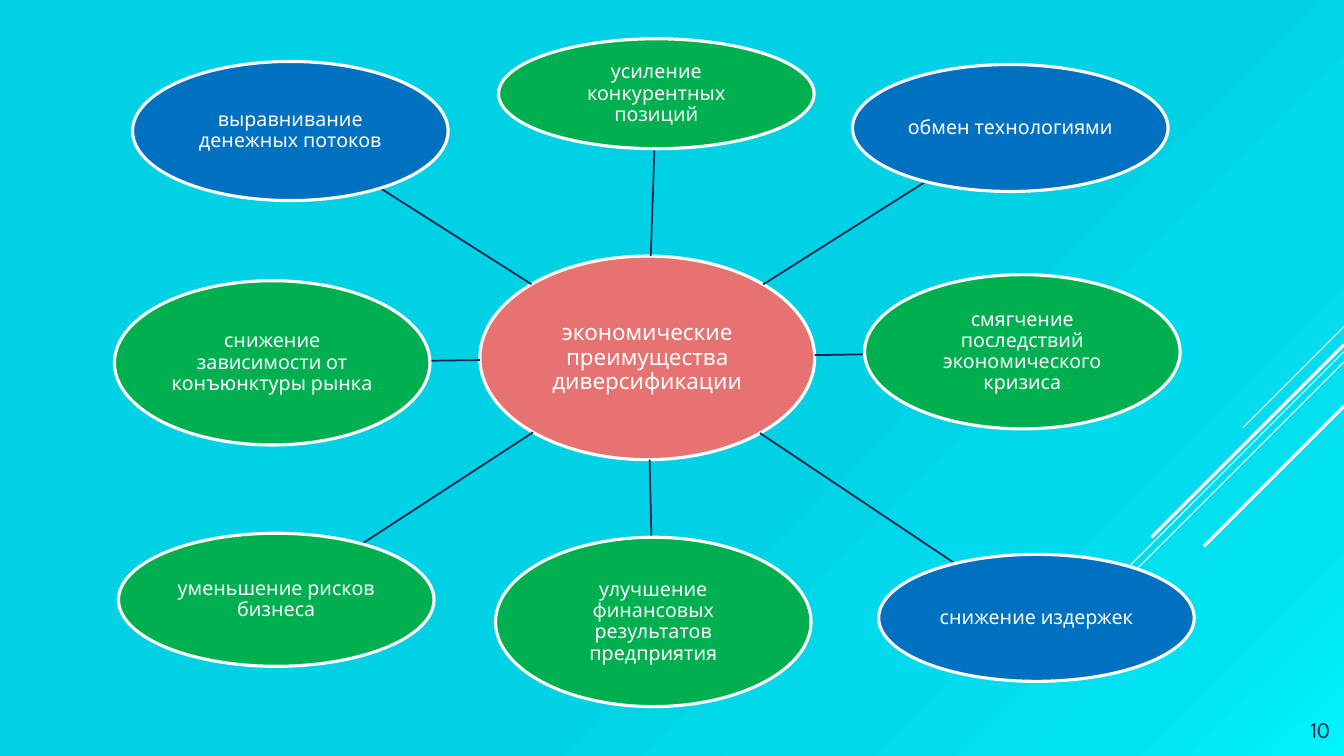
import math
from lxml import etree
from pptx import Presentation
from pptx import util as u
from pptx.dml import color
from pptx.enum import shapes, text
from pptx.oxml import ns

COLUMNS, ROWS = 13.33, 7.5
CELL = u.Inches(1)
FONT = "League Spartan"
WHITE, NAVY, INK = "FFFFFF", "04264E", "0A304A"
CORAL, GREEN, BLUE = "E67272", "00B050", "0070C0"
BACKGROUND_STOPS = [(0, "00F5FF"), (11, "01E3F2"), (26, "01DAEC"), (41, "01D1E5")]
DIAGONALS = [(3.24, 1, 0.75), (3.49, 3.26, 0.75), (3.59, 2.07, 0.75),
             (3.42, 1.91, 2.25), (4.03, 1.39, 2.25)]
HUB_TEXT = "экономические преимущества диверсификации"
BENEFIT_WIDTH = 3.13
BENEFITS = [
    ("усиление конкурентных позиций", 0.09, -2.62, 1.09, GREEN),
    ("обмен технологиями", 3.6, -2.28, 1.26, BLUE),
    ("смягчение последствий экономического кризиса", 3.72, -0.06, 1.53, GREEN),
    ("снижение издержек", 3.86, 2.58, 1.26, BLUE),
    ("улучшение финансовых результатов предприятия", 0.06, 2.62, 1.68, GREEN),
    ("уменьшение рисков бизнеса", -3.68, 2.4, 1.32, GREEN),
    ("снижение зависимости от конъюнктуры рынка", -3.72, 0.05, 1.63, GREEN),
    ("выравнивание денежных потоков", -3.54, -2.25, 1.38, BLUE),
]


def rgb(value):
    """Turn a hex string into a colour."""
    return color.RGBColor.from_string(value)


def grid(*cells):
    """Turn grid cells into slide lengths."""
    return [round(cell * CELL) for cell in cells]


def set_all(target, values):
    """Set every attribute of a dict on the target."""
    for name, value in values.items():
        setattr(target, name, value)


def write(frame, words, size, ink, frame_format, paragraph_format):
    """Write one formatted paragraph into a text frame."""
    set_all(frame, {"word_wrap": True, **frame_format})
    paragraph = frame.paragraphs[0]
    set_all(paragraph, paragraph_format)
    run = paragraph.add_run()
    run.text = words
    set_all(run.font, {"size": u.Pt(size), "name": FONT})
    run.font.color.rgb = rgb(ink)


def draw_line(slide, start, end, ink, width):
    """Draw a straight line without a shadow."""
    line = slide.shapes.add_connector(
        shapes.MSO_CONNECTOR.STRAIGHT, *grid(*start, *end))
    line.line.color.rgb = rgb(ink)
    line.line.width = u.Pt(width)
    etree.SubElement(line._element.spPr, ns.qn("a:effectLst"))


def draw_ellipse(slide, centre, size, words, points, fill):
    """Draw a white-rimmed ellipse with its label around a centre."""
    (x, y), (width, height) = centre, size
    shape = slide.shapes.add_shape(
        shapes.MSO_SHAPE.OVAL, *grid(x - width / 2, y - height / 2, width, height))
    shape.shadow.inherit = False
    shape.fill.solid()
    shape.fill.fore_color.rgb = rgb(fill)
    shape.line.color.rgb = rgb(WHITE)
    shape.line.width = u.Pt(2.25)
    margins = {f"margin_{side}": u.Inches(0.01)
               for side in ("left", "top", "right", "bottom")}
    write(shape.text_frame, words, points, WHITE,
          {"vertical_anchor": text.MSO_ANCHOR.MIDDLE, **margins},
          {"alignment": text.PP_ALIGN.CENTER, "line_spacing": 0.9})


def rim_point(centre, size, dx, dy):
    """Find where a ray from the centre of an ellipse crosses its rim."""
    reach = math.hypot(dx / (size[0] / 2), dy / (size[1] / 2))
    return centre[0] + dx / reach, centre[1] + dy / reach


def draw_background(slide):
    """Fill the slide with its diagonal gradient."""
    fill = slide.background.fill
    fill.gradient()
    fill.gradient_angle = 135
    stops = slide._element.find(".//" + ns.qn("a:gsLst"))
    for stop in list(stops):
        stops.remove(stop)
    for position, value in BACKGROUND_STOPS:
        stop = etree.SubElement(stops, ns.qn("a:gs"), pos=str(position * 1000))
        etree.SubElement(stop, ns.qn("a:srgbClr"), val=value)


def draw_diagonals(slide, right):
    """Draw the parallel lines that fall from the right edge at 45 degrees."""
    for top, run, width in DIAGONALS:
        draw_line(slide, (right, top), (right - run, top + run), WHITE, width)


def draw_wheel(slide, left, top, width, height):
    """Draw the hub in its box and the benefits joined to it by spokes."""
    hub, hub_size = (left + width / 2, top + height / 2), (width, height)
    draw_ellipse(slide, hub, hub_size, HUB_TEXT, 16, CORAL)
    for words, dx, dy, benefit_height, fill in BENEFITS:
        centre, size = (hub[0] + dx, hub[1] + dy), (BENEFIT_WIDTH, benefit_height)
        draw_line(slide, rim_point(hub, hub_size, dx, dy),
                  rim_point(centre, size, -dx, -dy), NAVY, 1.25)
        draw_ellipse(slide, centre, size, words, 14, fill)


def draw_number(slide, left, top, width, height):
    """Write the slide number in its box."""
    box = slide.shapes.add_textbox(*grid(left, top, width, height))
    write(box.text_frame, "10", 16, INK,
          {"vertical_anchor": text.MSO_ANCHOR.BOTTOM},
          {"alignment": text.PP_ALIGN.RIGHT})


def main():
    """Build and save the presentation."""
    presentation = Presentation()
    presentation.slide_width, presentation.slide_height = grid(COLUMNS, ROWS)
    slide = presentation.slides.add_slide(presentation.slide_layouts[6])
    draw_background(slide)
    draw_diagonals(slide, COLUMNS)
    draw_wheel(slide, 4.76, 2.54, 3.32, 2.02)
    draw_number(slide, 12.67, 7.03, 0.62, 0.39)
    presentation.save("out.pptx")


if __name__ == "__main__":
    main()
